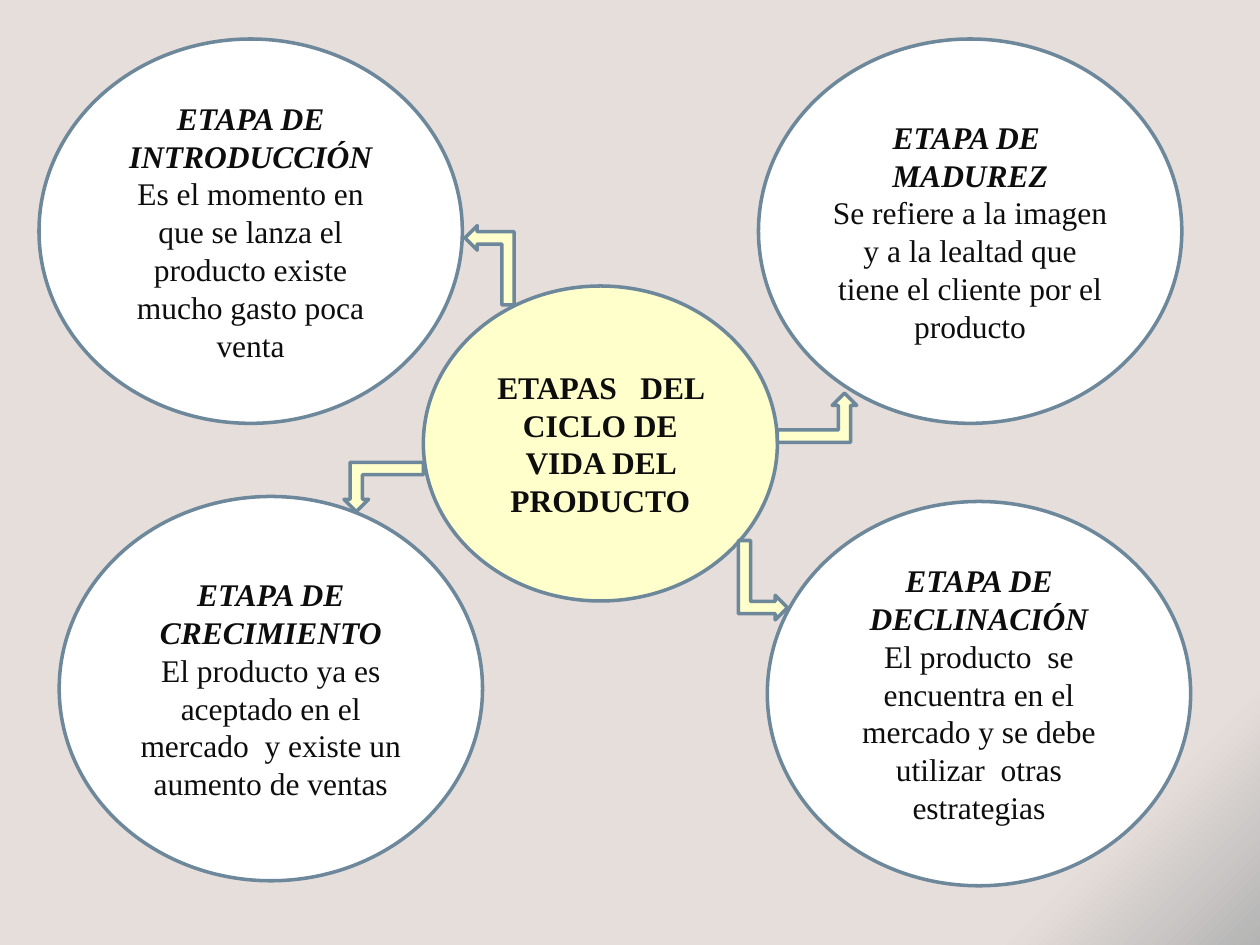
from dataclasses import dataclass

import pptx
import pptx.dml.color
import pptx.enum.shapes
import pptx.enum.text
import pptx.oxml
import pptx.oxml.ns
import pptx.util
from pptx.util import Inches

RGBColor = pptx.dml.color.RGBColor
MSO_SHAPE = pptx.enum.shapes.MSO_SHAPE

BACKGROUND = RGBColor(0xE6, 0xDE, 0xDB)
CORNER_GRAY = RGBColor(0xB4, 0xB4, 0xB4)
CREAM = RGBColor(0xFF, 0xFF, 0xCC)
WHITE = RGBColor(0xFF, 0xFF, 0xFF)
OUTLINE = RGBColor(0x6D, 0x87, 0x9B)
INK = RGBColor(0x0D, 0x0D, 0x0D)

FONT_NAME = "Times New Roman"
FONT_SIZE = pptx.util.Pt(18)
LINE_WIDTH = pptx.util.Pt(2)
STAGE_SIZE = (3.36, 3.05)
ARROW_SIZE = (0.63, 0.39)


@dataclass
class Stage:
    left: float
    top: float
    title: str
    description: str


@dataclass
class Arrow:
    left: float
    top: float
    rotation: int


STAGES = [
    Stage(6.02, 0.31, "ETAPA DE  MADUREZ",
          "Se refiere a la imagen y a la lealtad que tiene el cliente por el producto"),
    Stage(0.31, 0.31, "ETAPA DE INTRODUCCIÓN",
          "Es el momento en que se lanza el producto existe mucho gasto poca venta"),
    Stage(0.47, 3.94, "ETAPA DE CRECIMIENTO",
          "El producto ya es aceptado en el mercado  y existe un aumento de ventas"),
    Stage(6.09, 3.98, "ETAPA DE DECLINACIÓN",
          "El producto  se encuentra en el mercado y se debe utilizar  otras estrategias"),
]

ARROWS = [
    Arrow(6.17, 3.12, 0),
    Arrow(2.73, 3.67, 180),
    Arrow(5.74, 4.41, 90),
    Arrow(3.57, 1.91, 270),
]


def paint_background(slide: pptx.slide.Slide) -> None:
    fill = slide.background.fill
    fill.gradient()
    stops = ((0.88, BACKGROUND), (1.0, CORNER_GRAY))
    for stop, (position, color) in zip(fill.gradient_stops, stops):
        stop.position = position
        stop.color.rgb = color
    # Circular gradient spreading from the top left corner
    qn = pptx.oxml.ns.qn
    gradient = slide.element.find(".//" + qn("a:gradFill"))
    gradient.remove(gradient.find(qn("a:lin")))
    gradient.append(pptx.oxml.parse_xml(
        f'<a:path {pptx.oxml.ns.nsdecls("a")} path="circle">'
        '<a:fillToRect r="100000" b="100000"/></a:path>'))


def add_outlined_shape(slide: pptx.slide.Slide, kind: MSO_SHAPE, left: float, top: float,
                       size: tuple[float, float], color: RGBColor) -> pptx.shapes.autoshape.Shape:
    width, height = size
    shape = slide.shapes.add_shape(kind, Inches(left), Inches(top), Inches(width), Inches(height))
    shape.shadow.inherit = False
    shape.fill.solid()
    shape.fill.fore_color.rgb = color
    shape.line.color.rgb = OUTLINE
    shape.line.width = LINE_WIDTH
    return shape


def write_text(shape: pptx.shapes.autoshape.Shape, text: str, italic_title: bool) -> None:
    """Write centred text whose first paragraph is a bold title."""
    text_frame = shape.text_frame
    text_frame.text = text
    text_frame.word_wrap = True
    text_frame.vertical_anchor = pptx.enum.text.MSO_ANCHOR.MIDDLE
    for index, paragraph in enumerate(text_frame.paragraphs):
        paragraph.alignment = pptx.enum.text.PP_ALIGN.CENTER
        is_title = index == 0
        for run in paragraph.runs:
            run.font.name = FONT_NAME
            run.font.size = FONT_SIZE
            run.font.color.rgb = INK
            run.font.bold = is_title
            run.font.italic = is_title and italic_title


def main() -> None:
    presentation = pptx.Presentation()
    presentation.slide_width = Inches(10)
    presentation.slide_height = Inches(7.5)
    slide = presentation.slides.add_slide(presentation.slide_layouts[6])
    paint_background(slide)

    # Central topic
    center = add_outlined_shape(slide, MSO_SHAPE.OVAL, 3.36, 2.27, (2.81, 2.5), CREAM)
    write_text(center, "ETAPAS   DEL CICLO DE VIDA DEL PRODUCTO", italic_title=False)

    # Life cycle stages
    for stage in STAGES:
        oval = add_outlined_shape(slide, MSO_SHAPE.OVAL, stage.left, stage.top, STAGE_SIZE, WHITE)
        write_text(oval, f"{stage.title}\n{stage.description}", italic_title=True)

    # Bent arrows from the topic to each stage
    for arrow in ARROWS:
        shape = add_outlined_shape(slide, MSO_SHAPE.BENT_UP_ARROW, arrow.left, arrow.top,
                                   ARROW_SIZE, CREAM)
        shape.rotation = arrow.rotation

    presentation.save("out.pptx")


if __name__ == "__main__":
    main()
